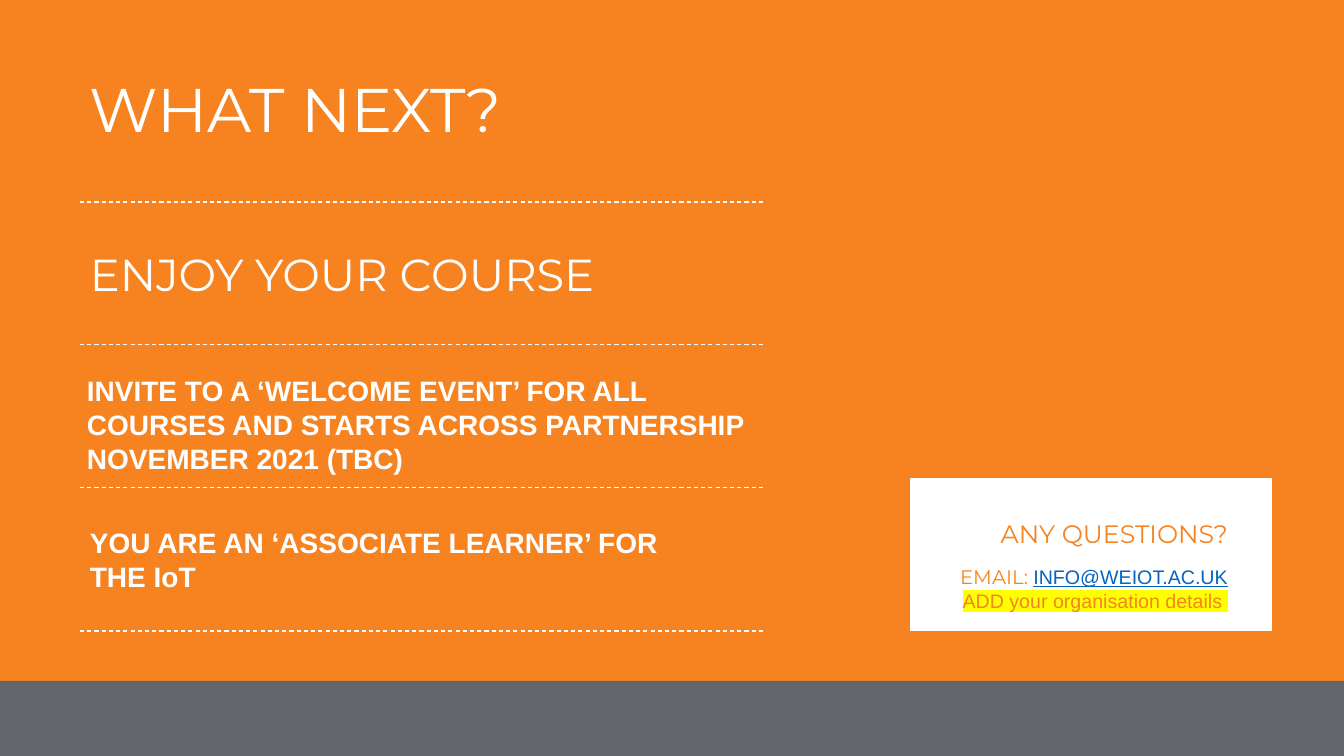
import pptx
import pptx.util
import pptx.dml.color
import pptx.enum.dml
import pptx.enum.shapes
import pptx.enum.text
import pptx.oxml
import pptx.oxml.ns

ORANGE = pptx.dml.color.RGBColor(0xF6, 0x83, 0x20)
GREY = pptx.dml.color.RGBColor(0x62, 0x65, 0x6A)
WHITE = pptx.dml.color.RGBColor(0xFF, 0xFF, 0xFF)
LINK_BLUE = pptx.dml.color.RGBColor(0x05, 0x63, 0xC1)
YELLOW = pptx.dml.color.RGBColor(0xFF, 0xFF, 0x00)

EMU_PER_PX = 914400 / 100.8
HEADING_FONT = "Montserrat"
BODY_FONT = "Arial"


def px(length):
    return pptx.util.Emu(round(length * EMU_PER_PX))


def add_panel(slide, left, top, width, height, fill, outline=None):
    panel = slide.shapes.add_shape(
        pptx.enum.shapes.MSO_SHAPE.RECTANGLE,
        px(left), px(top), px(width), px(height))
    panel.shadow.inherit = False
    panel.fill.solid()
    panel.fill.fore_color.rgb = fill
    if outline is None:
        panel.line.fill.background()
    else:
        panel.line.color.rgb = outline
        panel.line.width = pptx.util.Pt(1)


def add_divider(slide, left, right, y):
    divider = slide.shapes.add_connector(
        pptx.enum.shapes.MSO_CONNECTOR.STRAIGHT,
        px(left), px(y), px(right), px(y))
    divider.line.color.rgb = WHITE
    divider.line.width = pptx.util.Pt(0.75)
    divider.line.dash_style = pptx.enum.dml.MSO_LINE.DASH
    properties = divider._element.spPr
    properties.append(pptx.oxml.parse_xml(
        "<a:effectLst %s/>" % pptx.oxml.ns.nsdecls("a")))


def format_run(run, size, font=HEADING_FONT, color=WHITE, bold=False,
               underline=False, highlight=None):
    run.font.size = pptx.util.Pt(size)
    run.font.name = font
    run.font.color.rgb = color
    run.font.bold = bold
    run.font.underline = underline
    if highlight is not None:
        properties = run._r.get_or_add_rPr()
        text_fill = properties.find(pptx.oxml.ns.qn("a:solidFill"))
        text_fill.addnext(pptx.oxml.parse_xml(
            '<a:highlight %s><a:srgbClr val="%s"/></a:highlight>'
            % (pptx.oxml.ns.nsdecls("a"), highlight)))


def add_text(slide, left, top, width, height, paragraphs, align="LEFT",
             anchor="TOP", line_spacing=None, gaps=(), **run_format):
    """Each paragraph is a list of (text, format overrides) runs."""
    box = slide.shapes.add_textbox(px(left), px(top), px(width), px(height))
    frame = box.text_frame
    frame.word_wrap = True
    frame.vertical_anchor = getattr(pptx.enum.text.MSO_ANCHOR, anchor)
    for index, runs in enumerate(paragraphs):
        paragraph = frame.add_paragraph() if index else frame.paragraphs[0]
        paragraph.alignment = getattr(pptx.enum.text.PP_ALIGN, align)
        paragraph.line_spacing = line_spacing
        if index < len(gaps) and gaps[index]:
            paragraph.space_before = pptx.util.Pt(gaps[index])
        for text, overrides in runs:
            run = paragraph.add_run()
            run.text = text
            format_run(run, **{**run_format, **overrides})


def main():
    deck = pptx.Presentation()
    deck.slide_width, deck.slide_height = px(1344), px(756)
    slide = deck.slides.add_slide(deck.slide_layouts[6])
    slide.background.fill.solid()
    slide.background.fill.fore_color.rgb = ORANGE

    # Title and footer band
    add_text(slide, 80, 40, 1159, 146, [[("WHAT NEXT?", {})]],
             anchor="MIDDLE", line_spacing=0.9, size=44)
    add_panel(slide, 0, 681, 1344, 75, GREY)

    # Next steps, separated by evenly spaced dashed lines
    add_text(slide, 80, 242, 624, 64, [[("ENJOY YOUR COURSE", {})]], size=32)
    step_format = {"size": 20, "font": BODY_FONT, "bold": True}
    add_text(slide, 77, 369, 684, 112,
             [[("INVITE TO A ‘WELCOME EVENT’ FOR ALL COURSES AND STARTS "
                "ACROSS PARTNERSHIP", {})],
              [("NOVEMBER 2021 (TBC)", {})]], **step_format)
    add_text(slide, 80, 521, 624, 78,
             [[("YOU ARE AN ‘ASSOCIATE LEARNER’ FOR THE IoT", {})]],
             **step_format)
    for row in range(4):
        add_divider(slide, 80, 764, 202 + 143 * row)

    # Contact card
    add_panel(slide, 909, 477, 364, 155, WHITE, outline=ORANGE)
    add_text(slide, 939, 513, 299, 105,
             [[("ANY QUESTIONS?", {"size": 18})],
              [("EMAIL: ", {}),
               ("INFO@WEIOT.AC.UK", {"font": BODY_FONT, "color": LINK_BLUE,
                                     "underline": True})],
              [("ADD your organisation details ",
                {"font": BODY_FONT, "highlight": YELLOW})]],
             align="RIGHT", gaps=(0, 12), size=14, color=ORANGE)

    deck.save("out.pptx")


if __name__ == "__main__":
    main()
